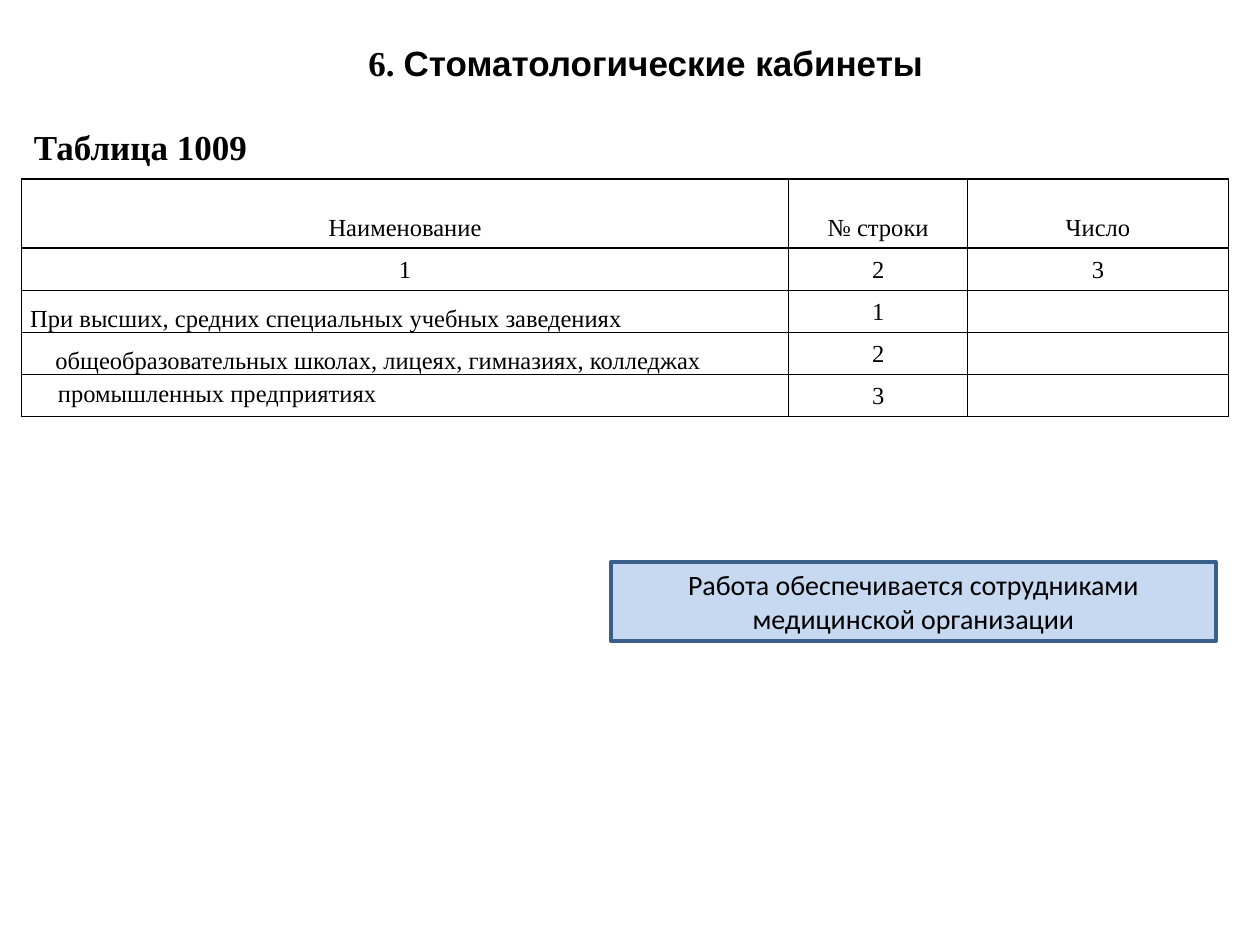
from pptx import Presentation
from pptx import util as u
from pptx.dml.color import RGBColor
from pptx.enum import shapes, text
from pptx.oxml.ns import qn
from lxml import etree

MID, LOW, TOP = (text.MSO_ANCHOR.MIDDLE, text.MSO_ANCHOR.BOTTOM,
                 text.MSO_ANCHOR.TOP)
LEFT, MIDDLE = text.PP_ALIGN.LEFT, text.PP_ALIGN.CENTER


def color(code):
    return RGBColor.from_string(code)


def inches(*nums):
    return [u.Inches(n) for n in nums]


class Page:
    serif, sans, body = "Times New Roman", "Arial", "Calibri"
    ink, fill, edge = "000000", "C6D9F1", "3A5F8C"

    def __init__(self, slide):
        self.slide = slide

    def add_runs(self, para, runs, size, align=LEFT, bold=False):
        """Add (words, font) runs to a paragraph."""
        para.alignment = align
        for words, face in runs:
            run = para.add_run()
            run.text = words
            font = run.font
            font.name, font.size, font.bold = face, u.Pt(size), bold
            font.color.rgb = color(self.ink)

    def label(self, box, runs, size, align=LEFT):
        frame = self.slide.shapes.add_textbox(*inches(*box)).text_frame
        frame.word_wrap = True
        frame.vertical_anchor = MID
        self.add_runs(frame.paragraphs[0], runs, size, align, True)

    def note(self, box, words, size):
        shape = self.slide.shapes.add_shape(
            shapes.MSO_SHAPE.RECTANGLE, *inches(*box))
        shape.shadow.inherit = False
        shape.fill.solid()
        shape.fill.fore_color.rgb = color(self.fill)
        shape.line.color.rgb = color(self.edge)
        shape.line.width = u.Pt(2)
        frame = shape.text_frame
        frame.word_wrap = True
        frame.vertical_anchor = MID
        self.add_runs(frame.paragraphs[0], [(words, self.body)], size, MIDDLE)

    def border(self, cell):
        props = cell._tc.get_or_add_tcPr()
        for at, side in enumerate(("lnL", "lnR", "lnT", "lnB")):
            line = etree.Element(qn("a:" + side), w=str(u.Pt(1)))
            fill = etree.SubElement(line, qn("a:solidFill"))
            etree.SubElement(fill, qn("a:srgbClr"), val=self.ink)
            props.insert(at, line)

    def cell(self, cell, words, align, anchor, pad, indent=0):
        cell.fill.background()
        self.border(cell)
        cell.vertical_anchor = anchor
        cell.margin_left = cell.margin_right = u.Inches(pad[0])
        cell.margin_top = cell.margin_bottom = u.Inches(pad[1])
        para = cell.text_frame.paragraphs[0]
        if indent:
            para._p.get_or_add_pPr().set("marL", str(u.Inches(indent)))
        if words:
            self.add_runs(para, [(words, self.serif)], 14, align)

    def table(self, left, top, cols, rows, data, names):
        """Draw centred data; names maps a row to its first cell's layout."""
        grid = self.slide.shapes.add_table(
            len(rows), len(cols),
            *inches(left, top, sum(cols), sum(rows))).table
        grid.first_row = grid.horz_banding = False
        for col, width in zip(grid.columns, cols):
            col.width = u.Inches(width)
        for row, height in zip(grid.rows, rows):
            row.height = u.Inches(height)
        for r, line in enumerate(data):
            for c, words in enumerate(line):
                look = MIDDLE, LOW, (0.1, 0.05) if words else (0.1, 0)
                if c == 0:
                    look = names.get(r, look)
                self.cell(grid.cell(r, c), words, *look)


def main():
    deck = Presentation()
    deck.slide_width, deck.slide_height = inches(10, 7.5)
    page = Page(deck.slides.add_slide(deck.slide_layouts[6]))

    page.label((0.25, 0.08, 9.75, 0.83),
               [("6. ", page.serif),
                ("Стоматологические кабинеты", page.sans)], 20, MIDDLE)
    page.label((0.17, 1, 2.25, 0.33), [("Таблица 1009", page.serif)], 20)

    data = [
        ("Наименование", "№ строки", "Число"),
        ("1", "2", "3"),
        ("При высших, средних специальных учебных заведениях", "1", ""),
        ("общеобразовательных школах, лицеях, гимназиях, колледжах", "2", ""),
        ("промышленных предприятиях", "3", ""),
    ]
    names = {2: (LEFT, LOW, (0.07, 0)),
             3: (LEFT, LOW, (0.07, 0), 0.2),
             4: (LEFT, TOP, (0.1, 0.05), 0.19)}
    page.table(0.17, 1.42, (6.09, 1.42, 2.07), [0.55] + [0.33] * 4,
               data, names)

    page.note((4.85, 4.46, 4.8, 0.63),
              "Работа обеспечивается сотрудниками медицинской организации", 16)
    deck.save("out.pptx")


if __name__ == "__main__":
    main()
